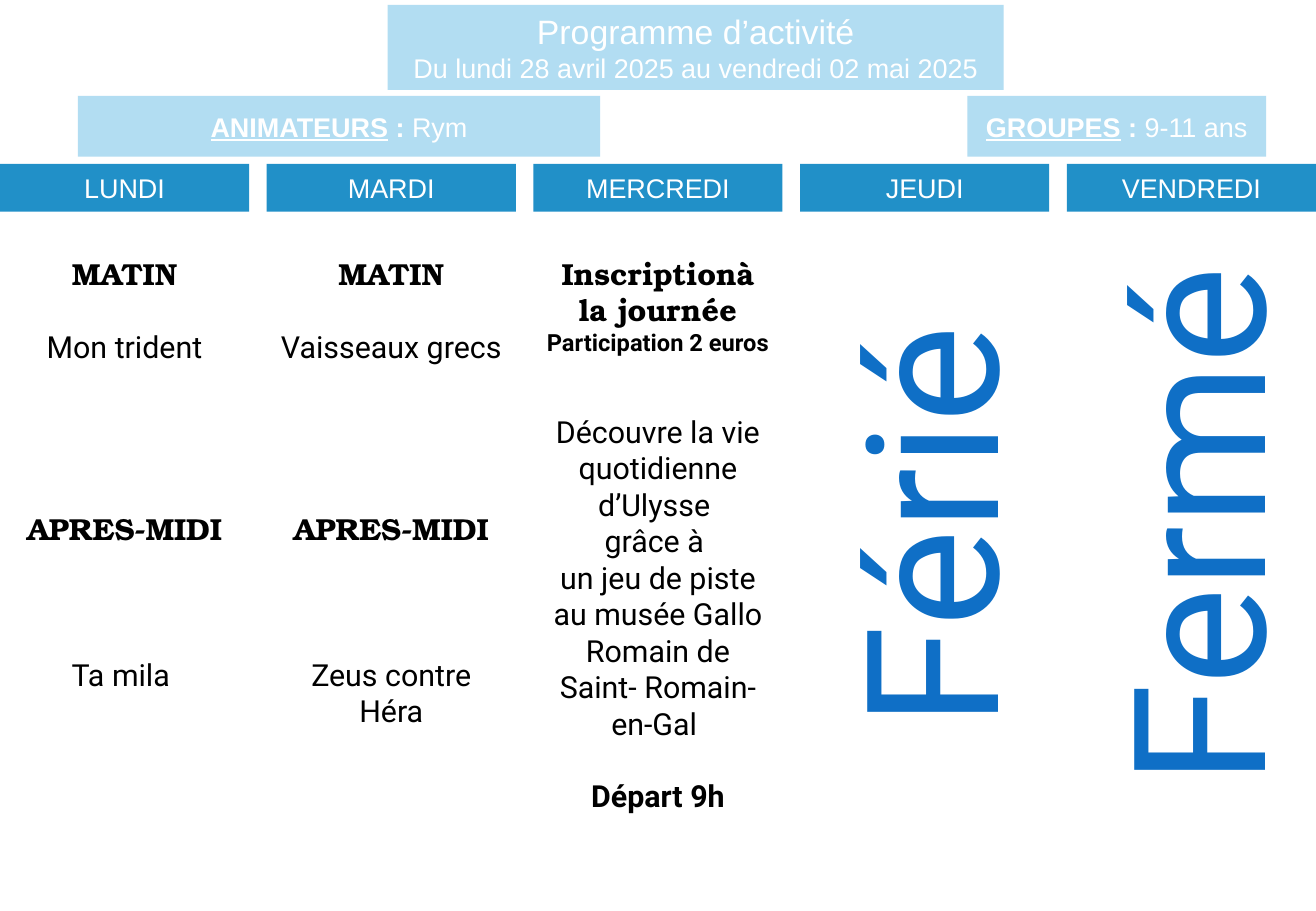
import pptx
import pptx.util
import pptx.dml.color
import pptx.enum.shapes
import pptx.enum.text

SLIDE_SIZE = (10.83, 7.5)
THEME = {
    "banner": "B2DDF2",
    "day": "2190C8",
    "title": {"name": "Arial", "size": 20, "color": "FFFFFF"},
    "label": {"name": "Arial", "size": 16, "color": "FFFFFF"},
    "label_bold": {"name": "Arial", "size": 16, "color": "FFFFFF", "bold": True},
    "label_key": {"name": "Arial", "size": 16, "color": "FFFFFF", "bold": True, "underline": True},
    "moment": {"name": "TeX Gyre Bonum", "size": 18, "color": "000000", "bold": True},
    "activity": {"name": "Roboto", "size": 18, "color": "000000"},
    "departure": {"name": "Roboto", "size": 18, "color": "000000", "bold": True},
    "fee": {"name": "Roboto", "size": 14, "color": "000000", "bold": True},
    "closed": {"name": "Roboto", "size": 109, "color": "0F6FC6"},
}
LINE_GAP = 21.6

BANNERS = [
    ((29.46, 0.53, 46.81, 9.33), [
        (0, [("Programme d’activité", "title")]),
        (0, [("Du lundi 28 avril 2025 au vendredi 02 mai 2025", "label")]),
    ]),
    ((5.91, 10.53, 39.7, 6.67), [
        (0, [("ANIMATEURS", "label_key"), (" : ", "label_bold"), ("Rym", "label")]),
    ]),
    ((73.5, 10.53, 22.71, 6.67), [
        (0, [("GROUPES", "label_key"), (" : ", "label_bold"), ("9-11 ans", "label")]),
    ]),
]


def half_days(morning, afternoon):
    return [
        (0, [("MATIN", "moment")]),
        (1, [(morning, "activity")]),
        (4, [("APRES-MIDI", "moment")]),
        (3, [(afternoon, "activity")]),
    ]


DAYS = [
    ("LUNDI", half_days("Mon trident", "Ta mila ")),
    ("MARDI", half_days("Vaisseaux grecs", "Zeus contre Héra")),
    ("MERCREDI", [
        (0, [("Inscriptionà la journée", "moment")]),
        (0, [("Participation 2 euros", "fee")]),
        (1.56, [("Découvre la vie quotidienne d’Ulysse ", "activity")]),
        (0, [("grâce à ", "activity")]),
        (0, [("un jeu de piste au musée Gallo Romain de Saint- Romain- en-Gal ", "activity")]),
        (1, [("Départ 9h", "departure")]),
    ]),
    ("JEUDI", "Férié"),
    ("VENDREDI", "Fermé"),
]
COLUMN_WIDTH = 18.93
COLUMN_STEP = (100 - COLUMN_WIDTH) / (len(DAYS) - 1)
DAY_TOP, DAY_HEIGHT = 18, 5.25
BODY_TOP, BODY_HEIGHT = 23.33, 68.9

deck = pptx.Presentation()
deck.slide_width, deck.slide_height = map(pptx.util.Inches, SLIDE_SIZE)
page = deck.slides.add_slide(deck.slide_layouts[6])


def place(area):
    return [round(share / 100 * length)
            for share, length in zip(area, (deck.slide_width, deck.slide_height) * 2)]


def write(shape, paragraphs, anchor="MIDDLE", top_inset=0.05):
    frame = shape.text_frame
    settings = {
        "word_wrap": True,
        "vertical_anchor": pptx.enum.text.MSO_ANCHOR[anchor],
        "margin_top": pptx.util.Inches(top_inset),
    }
    for name, value in settings.items():
        setattr(frame, name, value)
    for index, (gap_lines, spans) in enumerate(paragraphs):
        para = frame.add_paragraph() if index else frame.paragraphs[0]
        para.alignment = pptx.enum.text.PP_ALIGN.CENTER
        if gap_lines:
            para.space_before = pptx.util.Pt(gap_lines * LINE_GAP)
        for text, style in spans:
            span = para.add_run()
            span.text = text
            for name, value in THEME[style].items():
                if name == "color":
                    span.font.color.rgb = pptx.dml.color.RGBColor.from_string(value)
                else:
                    setattr(span.font, name, pptx.util.Pt(value) if name == "size" else value)


def add_band(area, color, paragraphs):
    band = page.shapes.add_shape(pptx.enum.shapes.MSO_SHAPE.RECTANGLE, *place(area))
    band.shadow.inherit = False
    band.fill.solid()
    band.fill.fore_color.rgb = pptx.dml.color.RGBColor.from_string(color)
    band.line.fill.background()
    write(band, paragraphs)


for area, paragraphs in BANNERS:
    add_band(area, THEME["banner"], paragraphs)

for column, (day, content) in enumerate(DAYS):
    column_left = column * COLUMN_STEP
    add_band((column_left, DAY_TOP, COLUMN_WIDTH, DAY_HEIGHT), THEME["day"],
             [(0, [(day, "label")])])
    left, top, width, height = place((column_left, BODY_TOP, COLUMN_WIDTH, BODY_HEIGHT))
    if isinstance(content, str):
        turned_left = left + (width - height) // 2
        turned_top = top + (height - width) // 2
        box = page.shapes.add_textbox(turned_left, turned_top, height, width)
        box.rotation = 270
        write(box, [(0, [(content, "closed")])])
    else:
        box = page.shapes.add_textbox(left, top, width, height)
        write(box, content, "TOP", 0.35)

deck.save("out.pptx")
